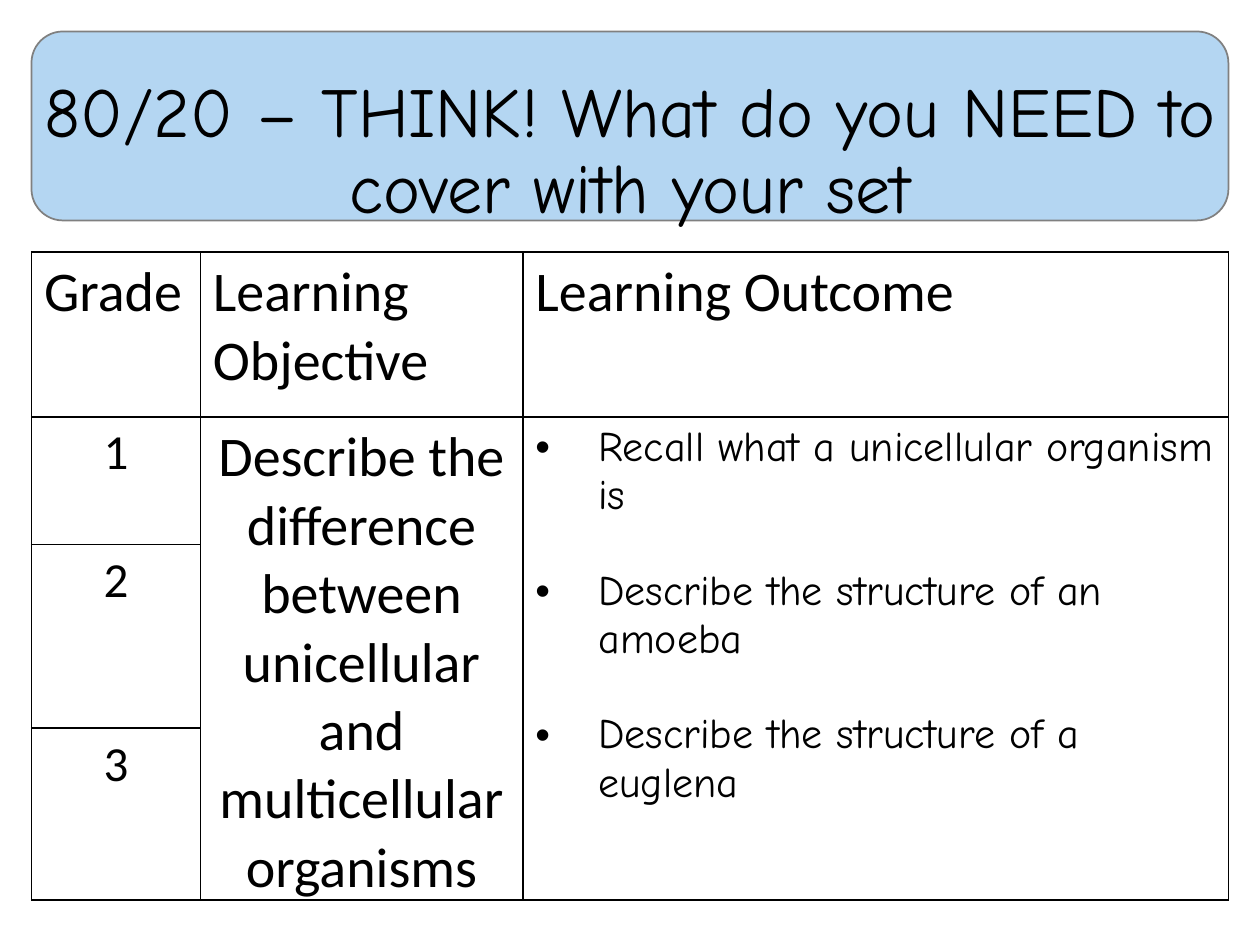
from dataclasses import dataclass

from lxml.etree import SubElement
from pptx import Presentation
from pptx.dml.color import RGBColor as Color
from pptx.enum.shapes import MSO_SHAPE as Shape
from pptx.enum.text import MSO_ANCHOR as Anchor, PP_ALIGN as Align
from pptx.oxml import parse_xml
from pptx.oxml.ns import nsdecls, qn
from pptx.util import Inches, Pt


@dataclass(frozen=True)
class Theme:
    """Colours, fonts and type sizes of the slide."""
    ink: str = "000000"
    paper: str = "FFFFFF"
    banner: str = "B4D6F2"
    outline: str = "808080"
    body_font: str = "Calibri"
    hand_font: str = "Comic Neue"
    title: int = 40
    heading: int = 32
    grade: int = 28
    outcome: int = 24
    outcome_gap: int = 27
    rule: int = 1


class SlideBuilder:
    """Draws styled elements on the current slide."""

    def __init__(self, slide, theme):
        self.slide = slide
        self.theme = theme

    def style(self, para, size, font, align=Align.LEFT):
        """Format a paragraph and its runs."""
        para.alignment = align
        for span in para.runs:
            span.font.size = Pt(size)
            span.font.name = font
            span.font.bold = False
            span.font.color.rgb = Color.from_string(self.theme.ink)

    def banner(self, left, top, width, height):
        """Add the rounded panel behind the title."""
        panel = self.slide.shapes.add_shape(
            Shape.ROUNDED_RECTANGLE, Inches(left), Inches(top), Inches(width), Inches(height))
        panel.shadow.inherit = False
        panel.fill.solid()
        panel.fill.fore_color.rgb = Color.from_string(self.theme.banner)
        panel.line.color.rgb = Color.from_string(self.theme.outline)
        panel.line.width = Pt(self.theme.rule)

    def title(self, text, left, top, width, height):
        """Add the centred title, resting on the bottom of its box."""
        box = self.slide.shapes.add_textbox(
            Inches(left), Inches(top), Inches(width), Inches(height))
        frame = box.text_frame
        frame.word_wrap = True
        frame.vertical_anchor = Anchor.BOTTOM
        frame.text = text
        para = frame.paragraphs[0]
        para.line_spacing = 0.9
        self.style(para, self.theme.title, self.theme.hand_font, Align.CENTER)

    def table(self, left, top, columns, rows):
        """Add a white table with ruled cells."""
        table = self.slide.shapes.add_table(
            len(rows), len(columns), Inches(left), Inches(top),
            Inches(sum(columns)), Inches(sum(rows))).table
        for column, width in zip(table.columns, columns):
            column.width = Inches(width)
        for row, height in zip(table.rows, rows):
            row.height = Inches(height)
        for cell in table.iter_cells():
            cell.fill.solid()
            cell.fill.fore_color.rgb = Color.from_string(self.theme.paper)
            self.borders(cell)
        return table

    def borders(self, cell):
        """Rule all four sides of a cell."""
        properties = cell._tc.get_or_add_tcPr()
        for index, side in enumerate(("lnL", "lnR", "lnT", "lnB")):
            properties.insert(index, parse_xml(
                f'<a:{side} {nsdecls("a")} w="{Pt(self.theme.rule)}"><a:solidFill>'
                f'<a:srgbClr val="{self.theme.ink}"/></a:solidFill></a:{side}>'))

    def cell(self, cell, text, size, align=Align.LEFT):
        """Fill a cell with one paragraph."""
        cell.text_frame.text = text
        self.style(cell.text_frame.paragraphs[0], size, self.theme.body_font, align)

    def bullets(self, cell, items):
        """Fill a cell with spaced bullet points."""
        frame = cell.text_frame
        frame.text = "\n".join(items)
        for para in frame.paragraphs:
            self.style(para, self.theme.outcome, self.theme.hand_font)
            para.space_after = Pt(self.theme.outcome_gap)
            properties = para._p.get_or_add_pPr()
            properties.set("marL", str(Inches(0.5)))
            properties.set("indent", str(-Inches(0.5)))
            SubElement(properties, qn("a:buFont")).set("typeface", "Arial")
            SubElement(properties, qn("a:buChar")).set("char", "•")
        frame.paragraphs[-1].space_after = Pt(0)


def main():
    """Build and save the slide."""
    deck = Presentation()
    deck.slide_width, deck.slide_height = Inches(10), Inches(7.5)
    theme = Theme()
    page = SlideBuilder(deck.slides.add_slide(deck.slide_layouts[6]), theme)

    page.banner(0.25, 0.25, 9.5, 1.5)
    page.title("80/20 – THINK! What do you NEED to cover with your set", 0.25, 0.25, 9.5, 1.61)

    table = page.table(0.25, 2, [1.34, 2.56, 5.6], [1.31, 1.01, 1.46, 1.31])
    for index, heading in enumerate(("Grade", "Learning Objective", "Learning Outcome")):
        page.cell(table.cell(0, index), heading, theme.heading)
    for grade in (1, 2, 3):
        page.cell(table.cell(grade, 0), str(grade), theme.grade, Align.CENTER)
    for column in (1, 2):
        table.cell(1, column).merge(table.cell(3, column))
    page.cell(table.cell(1, 1),
              "Describe the difference between unicellular and multicellular organisms",
              theme.heading, Align.CENTER)
    page.bullets(table.cell(1, 2), [
        "Recall what a unicellular organism is",
        "Describe the structure of an amoeba",
        "Describe the structure of a euglena",
    ])
    deck.save("out.pptx")


if __name__ == "__main__":
    main()
